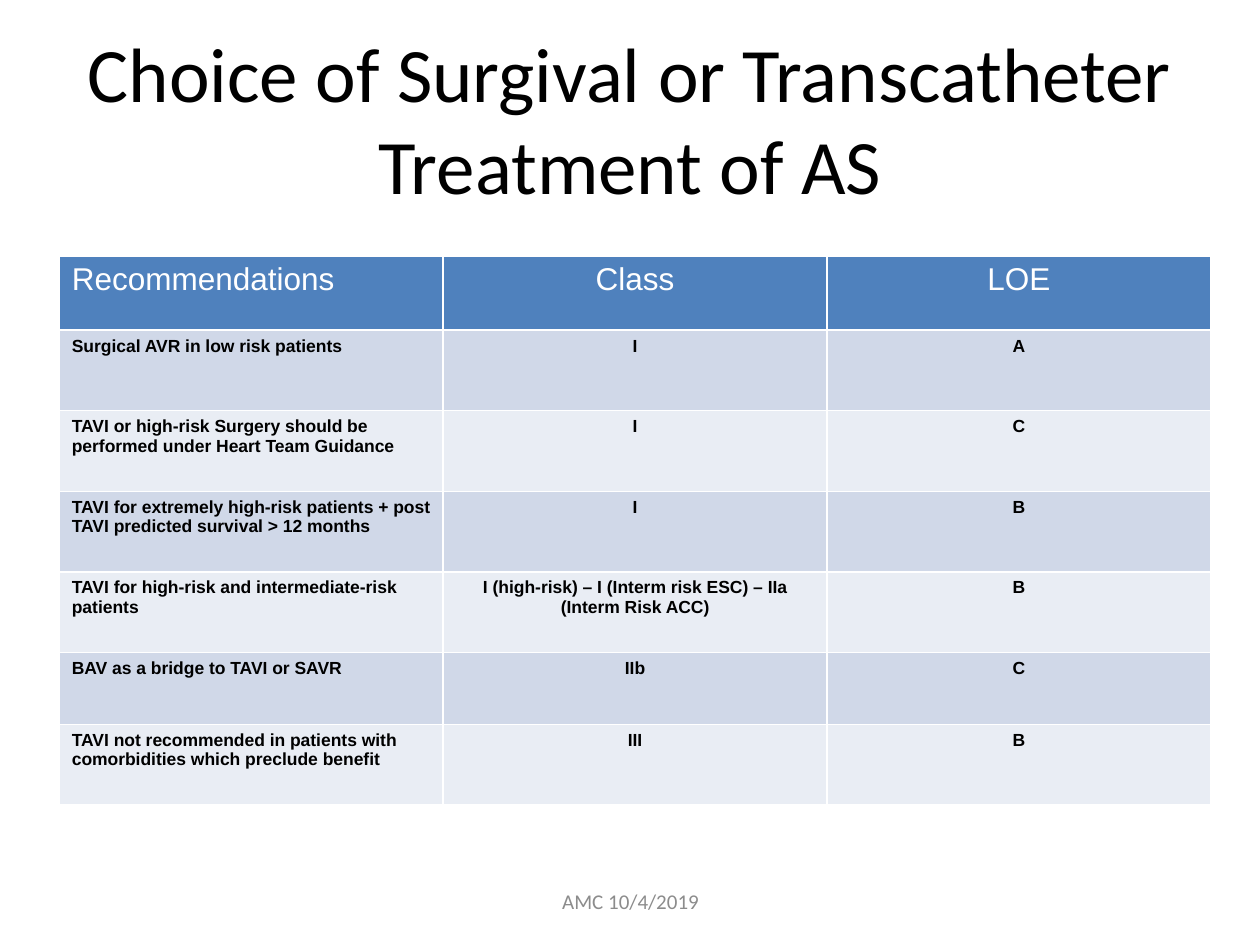
from pptx import Presentation
from pptx.dml.color import RGBColor
from pptx.enum.text import MSO_ANCHOR as Anchor, PP_ALIGN as Align
from pptx.oxml import parse_xml
from pptx.oxml.ns import nsdecls
from pptx.util import Inches, Pt


def color(value):
    return RGBColor.from_string(value)


def style(para, font_name, size, value, bold=False, align=Align.CENTER):
    para.alignment = align
    para.font.name = font_name
    para.font.size = Pt(size)
    para.font.bold = bold
    para.font.color.rgb = color(value)


deck = Presentation()
deck.slide_width, deck.slide_height = Inches(10), Inches(7.5)
page = deck.slides.add_slide(deck.slide_layouts[6])

captions = [
    ("Choice of Surgival or Transcatheter Treatment of AS", 0, 0.39, 10, 1.09, 44, "000000"),
    ("AMC 10/4/2019", 3.42, 6.95, 3.17, 0.4, 12, "8C8C8C"),
]
for text, left, top, width, height, size, value in captions:
    box = page.shapes.add_textbox(Inches(left), Inches(top), Inches(width), Inches(height))
    frame = box.text_frame
    frame.word_wrap = True
    frame.vertical_anchor = Anchor.MIDDLE
    frame.text = text
    style(frame.paragraphs[0], "Calibri", size, value)

rows = [
    ("Recommendations", "Class", "LOE"),
    ("Surgical AVR in low risk patients", "I", "A"),
    ("TAVI or high-risk Surgery should be performed under Heart Team Guidance", "I", "C"),
    ("TAVI for extremely high-risk patients + post TAVI predicted survival > 12 months", "I", "B"),
    ("TAVI for high-risk and intermediate-risk patients",
     "I (high-risk) – I (Interm risk ESC) – IIa (Interm Risk ACC)", "B"),
    ("BAV as a bridge to TAVI or SAVR", "IIb", "C"),
    ("TAVI not recommended in patients with comorbidities which preclude benefit", "III", "B"),
]
row_heights = [0.59, 0.64, 0.64, 0.64, 0.64, 0.57, 0.64]
table = page.shapes.add_table(
    len(rows), 3, Inches(0.47), Inches(2.03), Inches(9.14), Inches(sum(row_heights))
).table
for column in table.columns:
    column.width = Inches(9.14 / 3)

for row_index, texts in enumerate(rows):
    header = row_index == 0
    table.rows[row_index].height = Inches(row_heights[row_index])
    fill = "4F81BD" if header else ("E9EDF4", "D0D8E8")[row_index % 2]
    for column_index, text in enumerate(texts):
        cell = table.cell(row_index, column_index)
        cell.text = text
        align = Align.CENTER if column_index else Align.LEFT
        style(cell.text_frame.paragraphs[0], "Arial", 18 if header else 10,
              "FFFFFF" if header else "000000", not header, align)
        properties = cell._tc.get_or_add_tcPr()
        for side in ("lnL", "lnR", "lnT", "lnB"):
            properties.append(parse_xml(
                f'<a:{side} {nsdecls("a")} w="12700"><a:solidFill>'
                f'<a:srgbClr val="FFFFFF"/></a:solidFill></a:{side}>'))
        cell.fill.solid()
        cell.fill.fore_color.rgb = color(fill)

deck.save("out.pptx")
